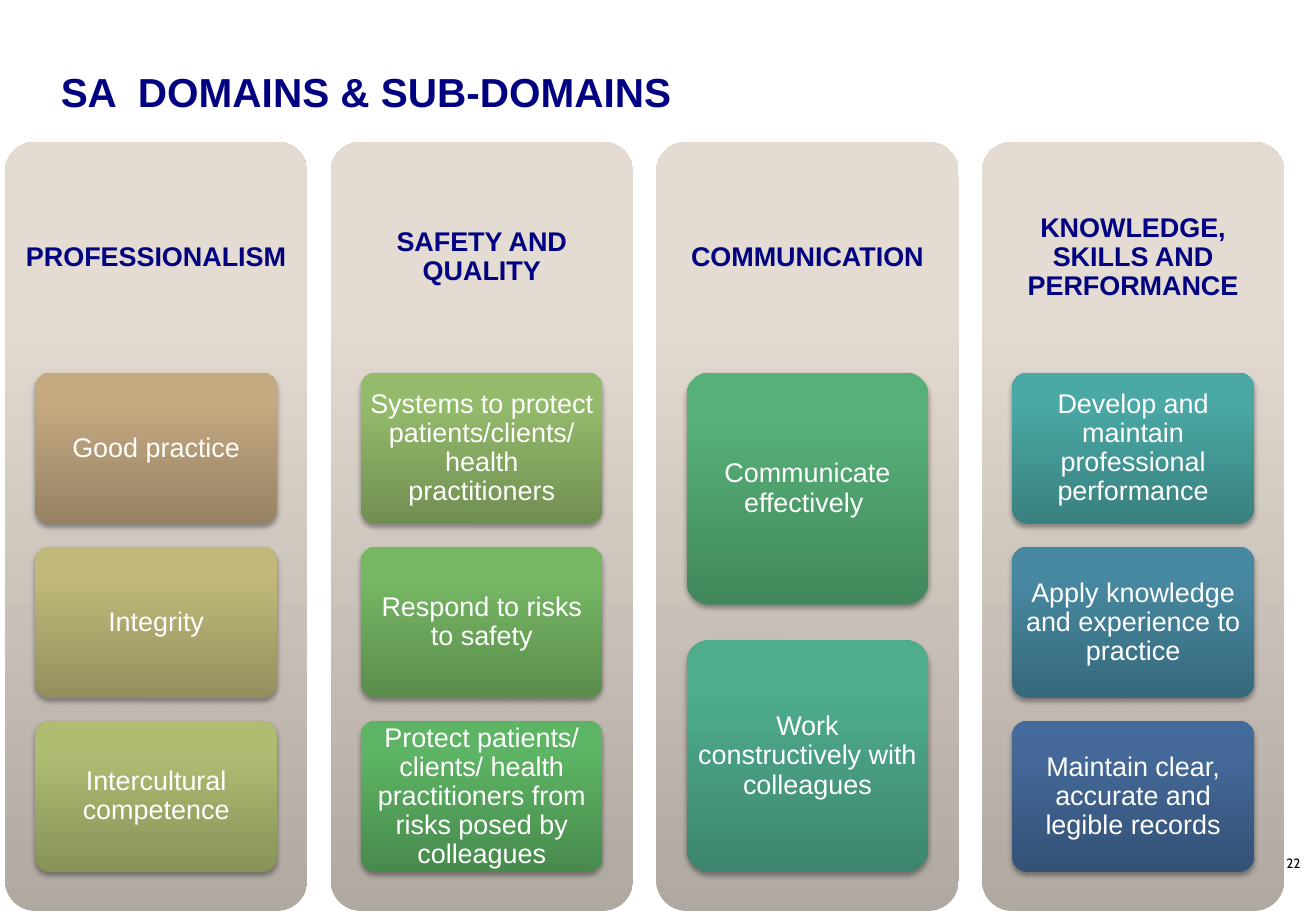
from copy import deepcopy
from lxml import etree
from pptx import Presentation
from pptx import util as u
from pptx.dml.color import RGBColor
from pptx.enum import shapes, text
from pptx.oxml import ns

NAVY = RGBColor(0x00, 0x00, 0x80)
WHITE = RGBColor(0xFF, 0xFF, 0xFF)
BLACK = RGBColor(0x00, 0x00, 0x00)
SAND = [RGBColor.from_string(c) for c in ("B0A9A2", "E4DCD2", "E5DDD2")]

DOMAINS = [
    ("PROFESSIONALISM", [
        ("Good practice", "978263", "C4A981", "C6AA80"),
        ("Integrity", "948F5E", "C0B97A", "C3BB79"),
        ("Intercultural competence", "879258", "AFBD73", "B0C072")]),
    ("SAFETY AND QUALITY", [
        ("Systems to protect patients/clients/ health practitioners", "728F53", "94BA6B", "94BC6A"),
        ("Respond to risks to safety", "5B8D4D", "76B764", "76B963"),
        ("Protect patients/ clients/ health practitioners from risks posed by colleagues",
         "488A4D", "5DB464", "5CB663")]),
    ("COMMUNICATION", [
        ("Communicate effectively ", "42885C", "56B078", "55B378"),
        ("Work constructively with colleagues", "3D856E", "4FAD8E", "4DB090")]),
    ("KNOWLEDGE, SKILLS AND PERFORMANCE", [
        ("Develop and maintain professional performance", "39817F", "4AA8A5", "48AAA7"),
        ("Apply knowledge and experience to practice", "36697C", "4789A1", "458AA3"),
        ("Maintain clear, accurate and legible records", "345176", "446999", "426A9C")]),
]


def write(shape, words, size=16, color=WHITE, bold=False, font="Arial", line=0.9,
          align=text.PP_ALIGN.CENTER, anchor=text.MSO_ANCHOR.MIDDLE,
          inset=(0.04, 0.03, 0.04, 0.03)):
    frame = shape.text_frame
    frame.word_wrap = True
    frame.auto_size = text.MSO_AUTO_SIZE.NONE
    frame.vertical_anchor = anchor
    frame.margin_left, frame.margin_top, frame.margin_right, frame.margin_bottom = map(u.Inches, inset)
    para = frame.paragraphs[0]
    para.alignment = align
    para.line_spacing = line
    run = para.add_run()
    run.text = words
    run.font.size = u.Pt(size)
    run.font.name = font
    run.font.bold = bold
    run.font.color.rgb = color


def block(left, top, width, height, colors):
    shape = slide.shapes.add_shape(shapes.MSO_SHAPE.ROUNDED_RECTANGLE, u.Inches(left),
                                   u.Inches(top), u.Inches(width), u.Inches(height))
    shape.adjustments[0] = 0.1
    shape.shadow.inherit = False
    shape.line.fill.background()
    shape.fill.gradient()
    shape.fill.gradient_angle = 90
    last = list(shape.element.spPr.iter(ns.qn("a:gs")))[-1]
    last.addnext(deepcopy(last))
    for stop, place, color in zip(shape.fill.gradient_stops, (0, 0.8, 1), colors):
        stop.position = place
        stop.color.rgb = color
    return shape


prs = Presentation()
prs.slide_width, prs.slide_height = u.Inches(10.83), u.Inches(7.5)
slide = prs.slides.add_slide(prs.slide_layouts[5])

title = slide.shapes.title
title.left, title.top, title.width, title.height = map(u.Inches, (0.4, 0.5, 9.44, 0.4))
write(title, "SA  DOMAINS & SUB-DOMAINS", size=24, color=NAVY, bold=True, line=1,
      align=text.PP_ALIGN.LEFT, anchor=text.MSO_ANCHOR.TOP, inset=(0.1, 0.05, 0.1, 0.05))

for col, (domain, cards) in enumerate(DOMAINS):
    left = 0.04 + col * 2.68
    panel = block(left, 1.17, 2.49, 6.33, SAND)
    write(panel, domain, color=NAVY, bold=True, inset=(0, 0, 0, 4.43))
    count = len(cards)
    high = 4.11 / (count + (count - 1) * 2 / 13)
    for row, (words, *tones) in enumerate(cards):
        card = block(left + 0.25, 3.07 + row * high * 15 / 13, 1.99, high,
                     [RGBColor.from_string(c) for c in tones])
        write(card, words)
        glow = card.element.spPr.find(ns.qn("a:effectLst"))
        shade = etree.SubElement(glow, ns.qn("a:outerShdw"), blurRad=str(u.Pt(3.1)),
                                 dist=str(u.Pt(1.8)), dir="5400000", rotWithShape="0")
        tint = etree.SubElement(shade, ns.qn("a:srgbClr"), val="000000")
        etree.SubElement(tint, ns.qn("a:alpha"), val="35000")

page = slide.shapes.add_shape(shapes.MSO_SHAPE.OVAL, u.Inches(10.4), u.Inches(6.91),
                              u.Inches(0.6), u.Inches(0.55))
page.shadow.inherit = False
page.fill.background()
page.line.fill.background()
write(page, "22", size=8, color=BLACK, font="Cabin", line=1, align=text.PP_ALIGN.LEFT,
      anchor=text.MSO_ANCHOR.TOP, inset=(0.1, 0.05, 0.1, 0.05))

prs.save("out.pptx")
